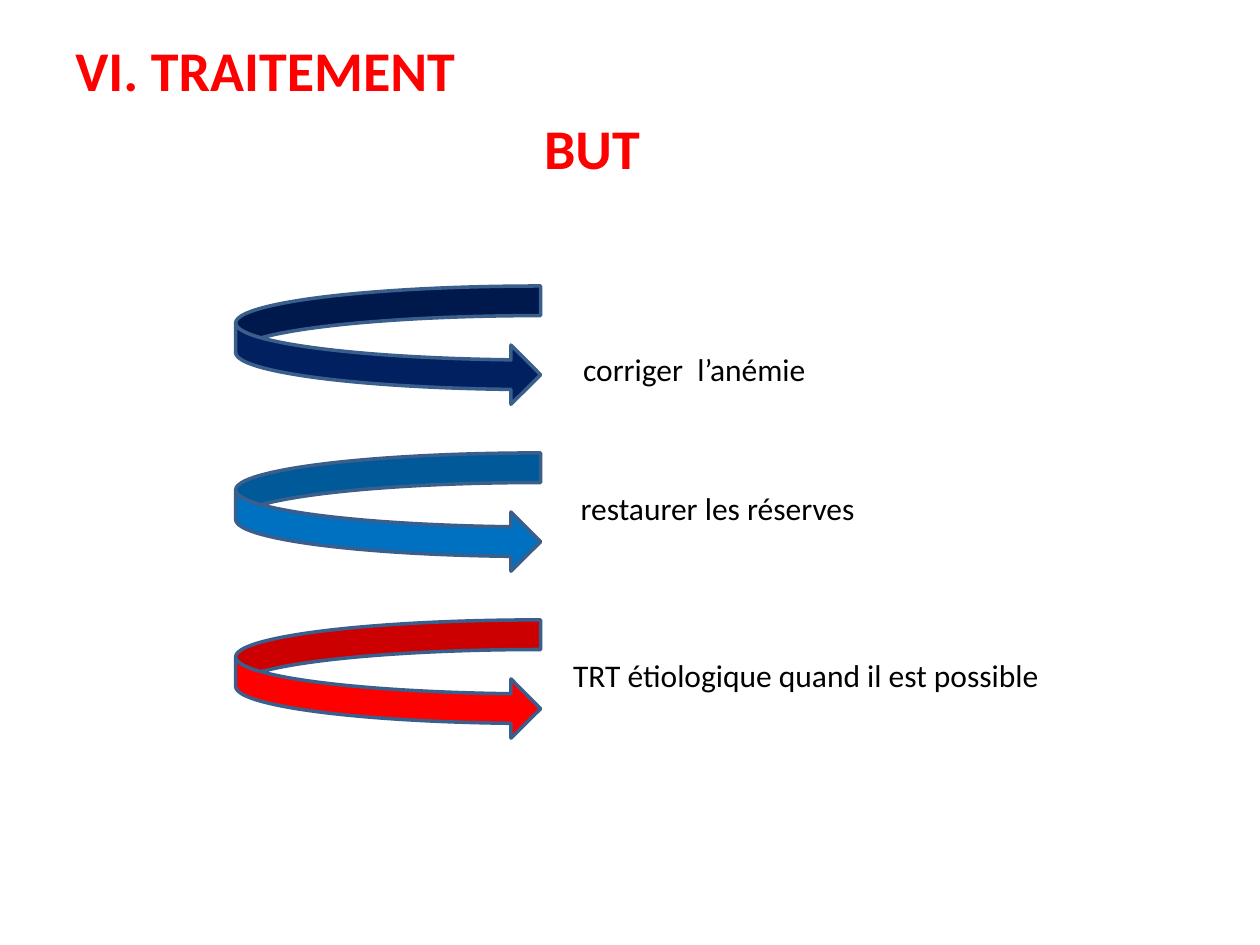
from dataclasses import dataclass

from pptx import Presentation
from pptx.dml.color import RGBColor
from pptx.enum.shapes import MSO_SHAPE
from pptx.util import Inches, Pt

CURVED_ARROW = MSO_SHAPE.CURVED_RIGHT_ARROW


@dataclass(frozen=True)
class Theme:
    font: str = "Calibri"
    heading: str = "FF0000"
    text: str = "000000"
    outline: str = "3A5F8C"
    outline_width: float = 2
    heading_size: int = 32
    label_size: int = 18


THEME = Theme()

ARROW_LEFT, ARROW_TOP, ARROW_WIDTH, ARROW_HEIGHT = 1.87, 2.27, 2.42, 0.94
ARROW_PITCH = 1.325
LABEL_HEIGHT = 0.4

# Arrow colour, label, label left, top and width
GOALS = [
    ("002060", "corriger  l’anémie", 4.53, 2.73, 2.5),
    ("0070C0", "restaurer les réserves", 4.51, 3.83, 3.3),
    ("FF0000", "TRT étiologique quand il est possible", 4.45, 5.16, 4.3),
]


def add_text_box(slide, left, top, width, height):
    box = slide.shapes.add_textbox(Inches(left), Inches(top), Inches(width), Inches(height))
    box.text_frame.word_wrap = True
    return box.text_frame


def write(paragraph, text, **format_values):
    run = paragraph.add_run()
    run.text = text
    color = format_values.pop("color")
    run.font.color.rgb = RGBColor.from_string(color)
    for name, value in {"name": THEME.font, **format_values}.items():
        setattr(run.font, name, value)


def add_headings(slide, left, top, width, height):
    """Section title, with the subtitle indented below it."""
    frame = add_text_box(slide, left, top, width, height)
    title = frame.paragraphs[0]
    subtitle = frame.add_paragraph()
    for paragraph, text, indent in ((title, "VI. TRAITEMENT", 0), (subtitle, "BUT", 3.72)):
        paragraph.space_before = Pt(0.2 * THEME.heading_size)
        paragraph._p.get_or_add_pPr().set("marL", str(Inches(indent)))
        write(paragraph, text, color=THEME.heading, size=Pt(THEME.heading_size), bold=True)


def add_arrow(slide, left, top, width, height, color):
    arrow = slide.shapes.add_shape(
        CURVED_ARROW, Inches(left), Inches(top), Inches(width), Inches(height)
    )
    arrow.shadow.inherit = False
    arrow.fill.solid()
    arrow.fill.fore_color.rgb = RGBColor.from_string(color)
    arrow.line.color.rgb = RGBColor.from_string(THEME.outline)
    arrow.line.width = Pt(THEME.outline_width)


def add_label(slide, left, top, width, height, text):
    frame = add_text_box(slide, left, top, width, height)
    write(frame.paragraphs[0], text, color=THEME.text, size=Pt(THEME.label_size))


def main():
    prs = Presentation()
    prs.slide_width, prs.slide_height = Inches(10), Inches(7.5)
    slide = prs.slides.add_slide(prs.slide_layouts[6])
    add_headings(slide, 0.5, 0.23, 9, 6.47)
    for row, (color, text, left, top, width) in enumerate(GOALS):
        arrow_top = ARROW_TOP + row * ARROW_PITCH
        add_arrow(slide, ARROW_LEFT, arrow_top, ARROW_WIDTH, ARROW_HEIGHT, color)
        add_label(slide, left, top, width, LABEL_HEIGHT, text)
    prs.save("out.pptx")


if __name__ == "__main__":
    main()
